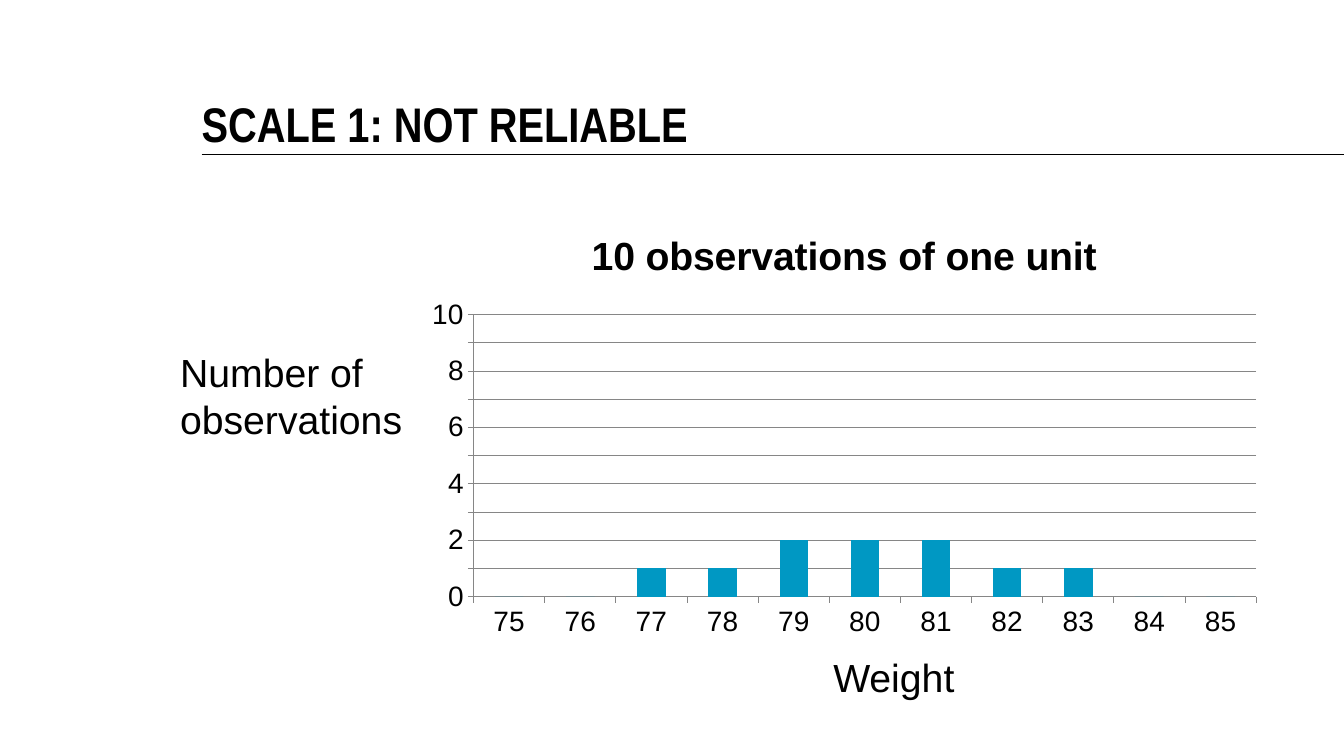
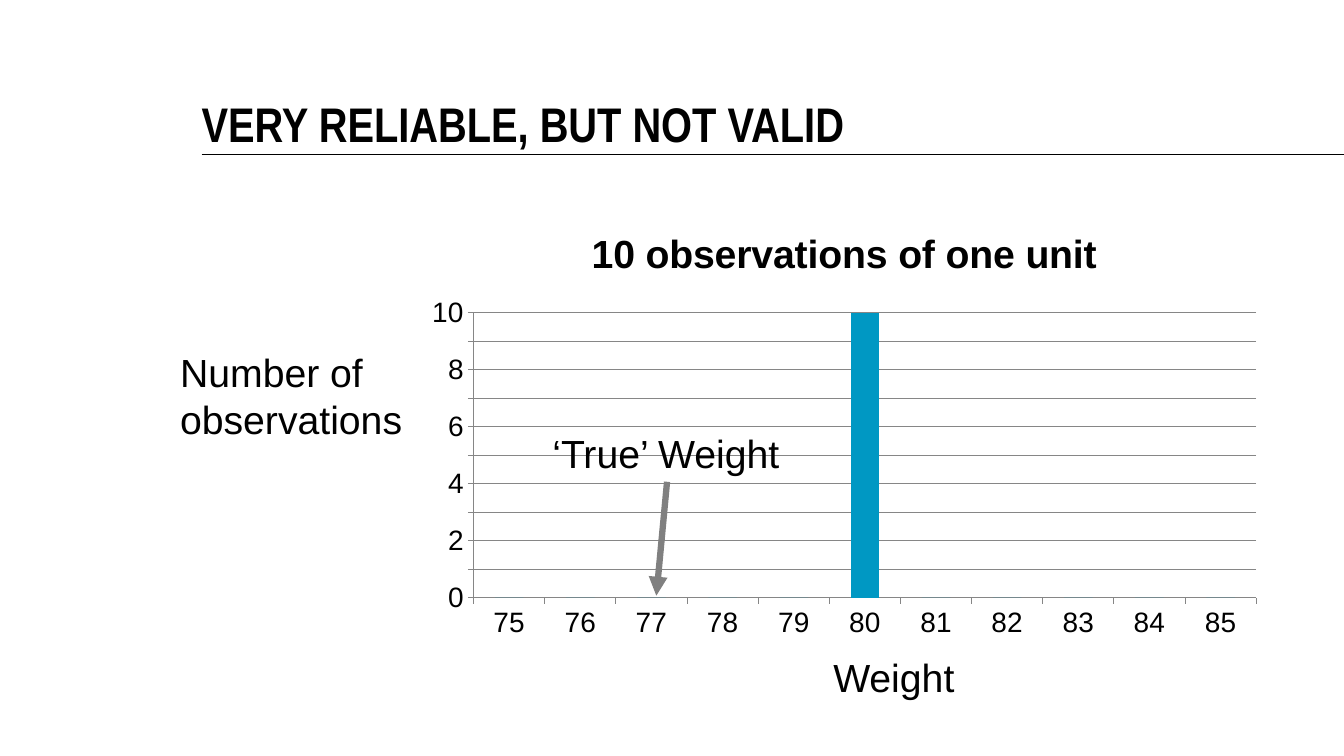
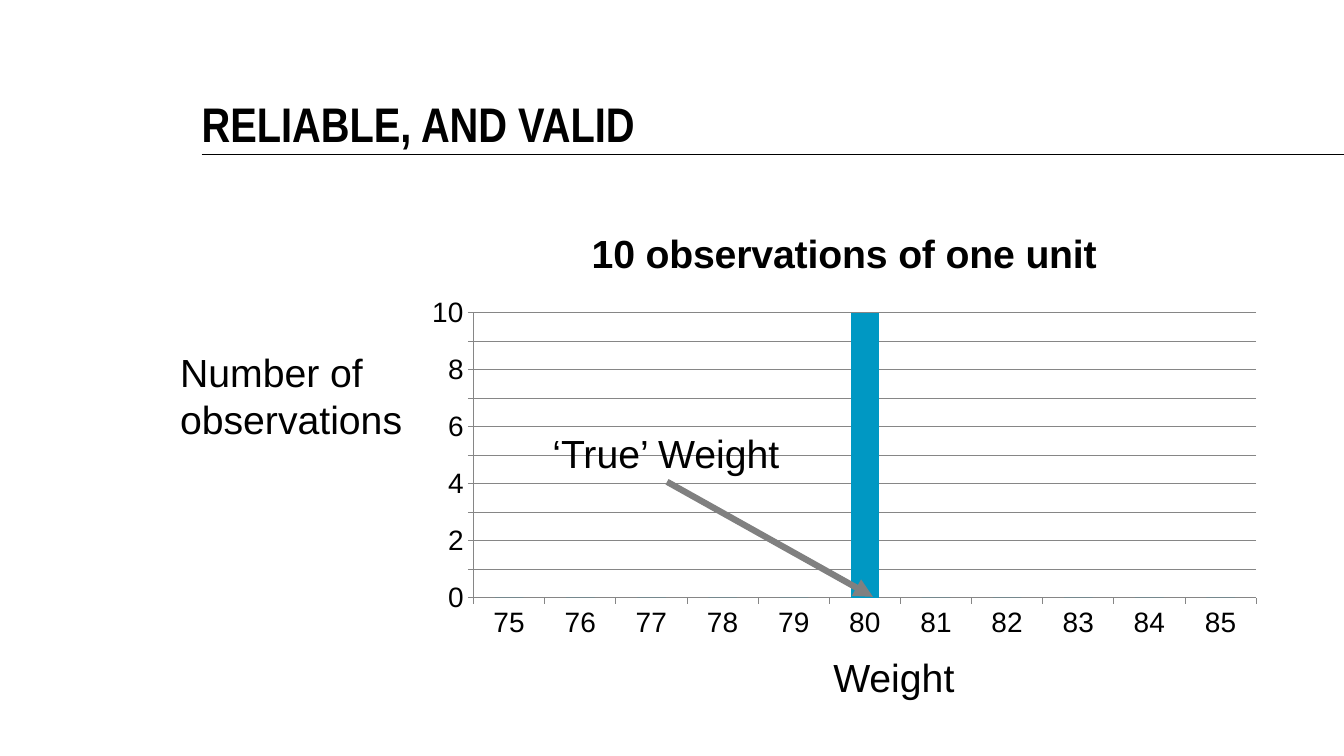
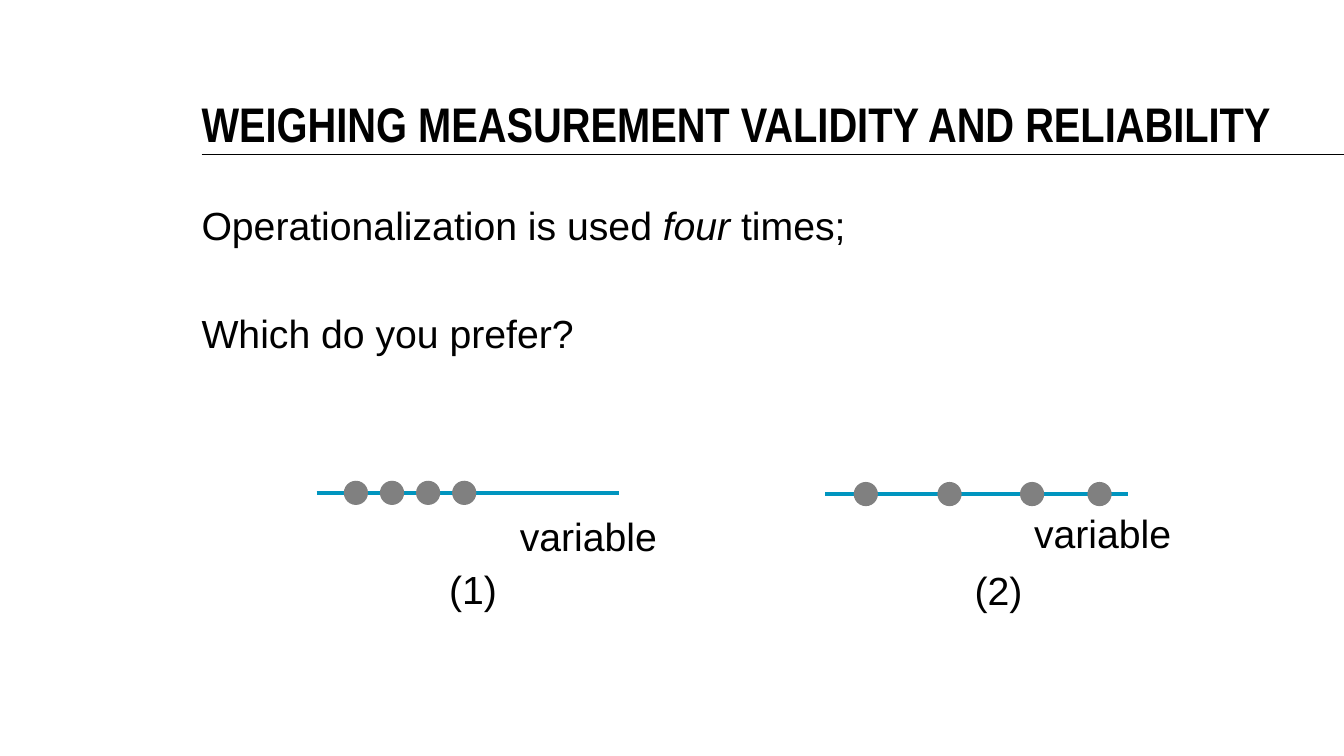
"""Builds four slides on the reliability and validity of measurement."""
import dataclasses

import pptx
import pptx.chart.data
import pptx.dml.color
import pptx.enum.chart
import pptx.enum.shapes
import pptx.enum.text
import pptx.oxml.xmlchemy
import pptx.util

Cm = pptx.util.Cm
Pt = pptx.util.Pt


def rgb(code):
    """Return the colour for a hexadecimal code."""
    return pptx.dml.color.RGBColor.from_string(code)


@dataclasses.dataclass(frozen=True)
class Theme:
    """Colours, fonts and type sizes of the deck."""
    ink: str = "000000"
    bar: str = "0098C3"
    scale: str = "0095BF"
    gray: str = "808080"
    grid: str = "868686"
    title_font: str = "Arial Narrow"
    body_font: str = "Arial"
    title_size: float = 34.7
    body_size: float = 28
    axis_size: float = 20
    chart_size: float = 18
    leading: float = 33.3


THEME = Theme()
WEIGHTS = [str(weight) for weight in range(75, 86)]
SPREAD = [0, 0, 1, 1, 2, 2, 2, 1, 1, 0, 0]
ALL_AT_80 = [10 if weight == "80" else 0 for weight in WEIGHTS]


def write(para, text, *, size=THEME.body_size, name=THEME.body_font,
          bold=False, italic=False):
    """Add a formatted span of text to a paragraph."""
    span = para.add_run()
    span.text = text
    span.font.size = Pt(size)
    span.font.name = name
    span.font.bold = bold
    span.font.italic = italic
    span.font.color.rgb = rgb(THEME.ink)


def add_label(slide, left, top, width, height, *lines):
    """Add an unwrapped label with one paragraph per line."""
    box = slide.shapes.add_textbox(Cm(left), Cm(top), Cm(width), Cm(height))
    frame = box.text_frame
    frame.word_wrap = False
    for index, line in enumerate(lines):
        write(frame.add_paragraph() if index else frame.paragraphs[0], line)


def add_line(slide, start, end, color, width, arrow=False):
    """Add a straight line between two points, with an optional arrowhead."""
    line = slide.shapes.add_connector(
        pptx.enum.shapes.MSO_CONNECTOR.STRAIGHT,
        *(Cm(length) for length in (*start, *end)))
    line.line.color.rgb = rgb(color)
    line.line.width = Pt(width)
    properties = line.line._get_or_add_ln()
    if arrow:
        head = pptx.oxml.xmlchemy.OxmlElement("a:tailEnd")
        head.set("type", "triangle")
        properties.append(head)
    properties.addnext(pptx.oxml.xmlchemy.OxmlElement("a:effectLst"))


def add_titled_slide(deck, text):
    """Add a slide with its title and the rule beneath it."""
    slide = deck.slides.add_slide(deck.slide_layouts[5])
    title = slide.shapes.title
    title.left, title.top = Cm(5.08), Cm(1.8)
    title.width, title.height = Cm(27.74), Cm(2.03)
    frame = title.text_frame
    frame.margin_left = frame.margin_right = 0
    frame.margin_top = frame.margin_bottom = 0
    frame.auto_size = pptx.enum.text.MSO_AUTO_SIZE.NONE
    frame.vertical_anchor = pptx.enum.text.MSO_ANCHOR.BOTTOM
    para = frame.paragraphs[0]
    para.alignment = pptx.enum.text.PP_ALIGN.LEFT
    para.line_spacing = Pt(THEME.leading)
    write(para, text, size=THEME.title_size, name=THEME.title_font, bold=True)
    add_line(slide, (5.08, 3.89), (33.87, 3.89), THEME.ink, 1)
    return slide


def style_axis(axis):
    """Give an axis its type, line and outward ticks."""
    axis.tick_labels.font.size = Pt(THEME.axis_size)
    axis.major_tick_mark = pptx.enum.chart.XL_TICK_MARK.OUTSIDE
    axis.minor_tick_mark = pptx.enum.chart.XL_TICK_MARK.NONE
    axis.format.line.color.rgb = rgb(THEME.grid)
    axis.format.line.width = Pt(0.75)


def add_histogram(slide, counts, top, height):
    """Add the column chart of observed weights."""
    heading = "10 observations of one unit"
    data = pptx.chart.data.CategoryChartData()
    data.categories = WEIGHTS
    data.add_series(heading, counts)
    chart = slide.shapes.add_chart(
        pptx.enum.chart.XL_CHART_TYPE.COLUMN_CLUSTERED,
        Cm(10.46), Cm(top), Cm(21.63), Cm(height), data).chart
    chart.font.name = THEME.body_font
    chart.font.size = Pt(THEME.chart_size)
    chart.font.color.rgb = rgb(THEME.ink)
    chart.has_legend = False
    chart.has_title = True
    write(chart.chart_title.text_frame.paragraphs[0], heading, bold=True)
    chart.chart_title.include_in_layout = False
    style_axis(chart.category_axis)
    axis = chart.value_axis
    style_axis(axis)
    axis.minimum_scale, axis.maximum_scale, axis.major_unit = 0, 10, 1
    axis.has_major_gridlines = True
    axis.major_gridlines.format.line.color.rgb = rgb(THEME.grid)
    axis.major_gridlines.format.line.width = Pt(0.75)
    plot = chart.plots[0]
    plot.gap_width = 150
    plot.vary_by_categories = False
    fill = plot.series[0].format.fill
    fill.solid()
    fill.fore_color.rgb = rgb(THEME.bar)


def add_chart_slide(deck, title, counts, top, height, true_weight=None):
    """Add a histogram slide, with an arrow to the true weight if given."""
    slide = add_titled_slide(deck, title)
    add_histogram(slide, counts, top, height)
    add_label(slide, 20.75, 16.33, 3.61, 1.45, "Weight")
    add_label(slide, 4.29, 8.66, 6.17, 2.64, "Number of", "observations")
    if true_weight:
        add_line(slide, (16.81, 12.14), true_weight, THEME.gray, 4.5, arrow=True)
        add_label(slide, 13.67, 10.69, 6.3, 1.45, "‘True’ Weight")


def add_dot_scale(slide, left, middle, offsets):
    """Add a variable's line with a dot at each offset from its left end."""
    add_line(slide, (left, middle), (left + 7.62, middle), THEME.scale, 3)
    size = 0.61
    for offset in offsets:
        dot = slide.shapes.add_shape(
            pptx.enum.shapes.MSO_SHAPE.OVAL, Cm(left + offset - size / 2),
            Cm(middle - size / 2), Cm(size), Cm(size))
        dot.shadow.inherit = False
        dot.fill.solid()
        dot.fill.fore_color.rgb = rgb(THEME.gray)
        dot.line.fill.background()


def add_question(slide):
    """Add the statement and the question about the two scales."""
    box = slide.shapes.add_textbox(Cm(5.08), Cm(4.95), Cm(27.81), Cm(12.37))
    frame = box.text_frame
    frame.word_wrap = True
    frame.margin_left = 0
    statement, question = frame.paragraphs[0], frame.add_paragraph()
    write(statement, "Operationalization is used ")
    write(statement, "four", italic=True)
    write(statement, " times;")
    write(question, "Which do you prefer?")
    statement.line_spacing = question.line_spacing = Pt(THEME.leading)
    question.space_before = Pt(44.5)


def add_comparison_slide(deck):
    """Add the slide that compares a narrow and a wide set of results."""
    slide = add_titled_slide(
        deck, "WEIGHING MEASUREMENT VALIDITY AND RELIABILITY")
    add_question(slide)
    add_dot_scale(slide, 7.98, 12.42, [0.99 + 0.91 * step for step in range(4)])
    add_label(slide, 12.85, 12.78, 4.01, 1.45, "variable")
    add_label(slide, 11.07, 14.12, 1.73, 1.45, "(1)")
    add_dot_scale(slide, 20.8, 12.45, [1.02, 3.13, 5.21, 6.91])
    add_label(slide, 25.81, 12.7, 4.01, 1.45, "variable")
    add_label(slide, 24.31, 14.15, 1.73, 1.45, "(2)")


def main():
    """Build and save the deck."""
    deck = pptx.Presentation()
    deck.slide_width, deck.slide_height = Cm(33.87), Cm(19.05)
    add_chart_slide(deck, "SCALE 1: NOT RELIABLE", SPREAD, 5.28, 11.02)
    add_chart_slide(deck, "VERY RELIABLE, BUT NOT VALID", ALL_AT_80,
                    5.23, 11.1, (16.54, 15.01))
    add_chart_slide(deck, "RELIABLE, AND VALID", ALL_AT_80,
                    5.23, 11.1, (22, 15.04))
    add_comparison_slide(deck)
    deck.save("out.pptx")


if __name__ == "__main__":
    main()
